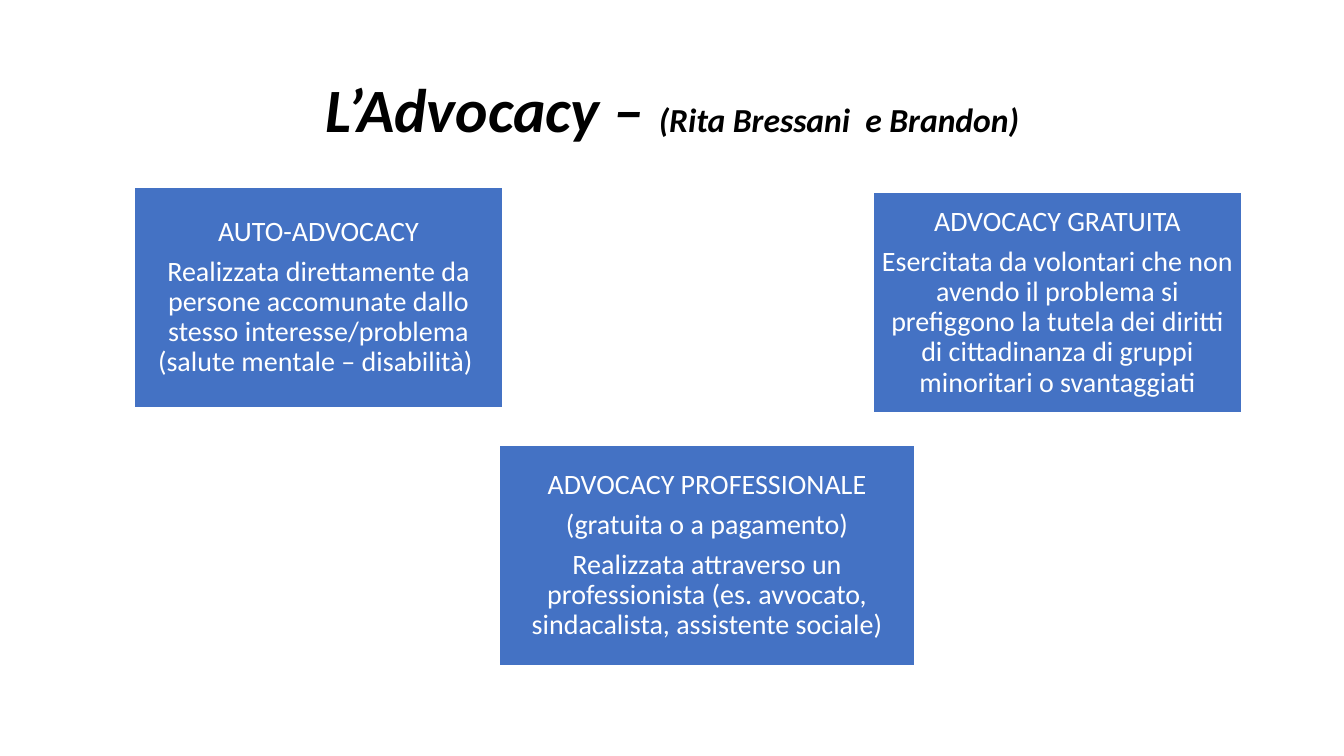
from dataclasses import dataclass

from pptx import Presentation
from pptx.dml.color import RGBColor
from pptx.enum.shapes import MSO_SHAPE
from pptx.enum.text import MSO_ANCHOR, PP_ALIGN
from pptx.util import Emu, Pt

WIDTH, HEIGHT = 1344, 756
SCALE = 12192000 / WIDTH


def px(count):
    """Turn whole pixels into EMU."""
    return Emu(round(count * SCALE))


@dataclass(frozen=True)
class Theme:
    """Colours and type sizes."""
    font: str = "Calibri"
    ink: RGBColor = RGBColor(0, 0, 0)
    paper: RGBColor = RGBColor(255, 255, 255)
    blue: RGBColor = RGBColor(0x44, 0x72, 0xC4)
    title: int = 44
    credit: int = 24
    body: int = 20
    gap: int = 7
    leading: float = 0.9


class Deck:
    """Draws elements on the current slide in one style."""

    def __init__(self, theme):
        """Start a deck with one blank slide."""
        self.theme = theme
        self.file = Presentation()
        self.file.slide_width, self.file.slide_height = px(WIDTH), px(HEIGHT)
        self.slide = self.file.slides.add_slide(self.file.slide_layouts[6])

    def frame(self, shape, side, edge):
        """Prepare the text frame of a shape."""
        frame = shape.text_frame
        frame.word_wrap = True
        frame.vertical_anchor = MSO_ANCHOR.MIDDLE
        frame.margin_left = frame.margin_right = px(side)
        frame.margin_top = frame.margin_bottom = px(edge)
        return frame

    def style(self, para, color):
        """Centre a paragraph and set its font."""
        para.alignment = PP_ALIGN.CENTER
        para.line_spacing = self.theme.leading
        para.font.name = self.theme.font
        para.font.color.rgb = color

    def title(self, box, parts):
        """Add a bold italic heading from sized parts."""
        shape = self.slide.shapes.add_textbox(*map(px, box))
        para = self.frame(shape, 10, 5).paragraphs[0]
        self.style(para, self.theme.ink)
        para.font.bold = para.font.italic = True
        for text, size in parts:
            run = para.add_run()
            run.text = text
            run.font.size = Pt(size)

    def card(self, box, lines):
        """Add a filled box with centred paragraphs."""
        shape = self.slide.shapes.add_shape(MSO_SHAPE.RECTANGLE, *map(px, box))
        shape.shadow.inherit = False
        shape.fill.solid()
        shape.fill.fore_color.rgb = self.theme.blue
        shape.line.color.rgb = self.theme.paper
        shape.line.width = Pt(1)
        frame = self.frame(shape, 8, 8)
        frame.text = "\n".join(lines)
        for para in frame.paragraphs:
            self.style(para, self.theme.paper)
            para.font.size = Pt(self.theme.body)
            para.space_after = Pt(self.theme.gap)


def main():
    """Build and save the slide."""
    theme = Theme()
    deck = Deck(theme)
    deck.title((93, 40, 1159, 146), [
        ("L’Advocacy – ", theme.title),
        ("(Rita Bressani  e Brandon)", theme.credit),
    ])
    cards = [
        (134, 187, 369, [
            "AUTO-ADVOCACY",
            "Realizzata direttamente da persone accomunate dallo stesso "
            "interesse/problema (salute mentale – disabilità) ",
        ]),
        (873, 192, 369, [
            "ADVOCACY GRATUITA",
            "Esercitata da volontari che non avendo il problema si prefiggono "
            "la tutela dei diritti di cittadinanza di gruppi minoritari o "
            "svantaggiati",
        ]),
        (499, 445, 416, [
            "ADVOCACY PROFESSIONALE",
            "(gratuita o a pagamento)",
            "Realizzata attraverso un professionista (es. avvocato, "
            "sindacalista, assistente sociale)",
        ]),
    ]
    for left, top, width, lines in cards:
        deck.card((left, top, width, 221), lines)
    deck.file.save("out.pptx")


if __name__ == "__main__":
    main()
